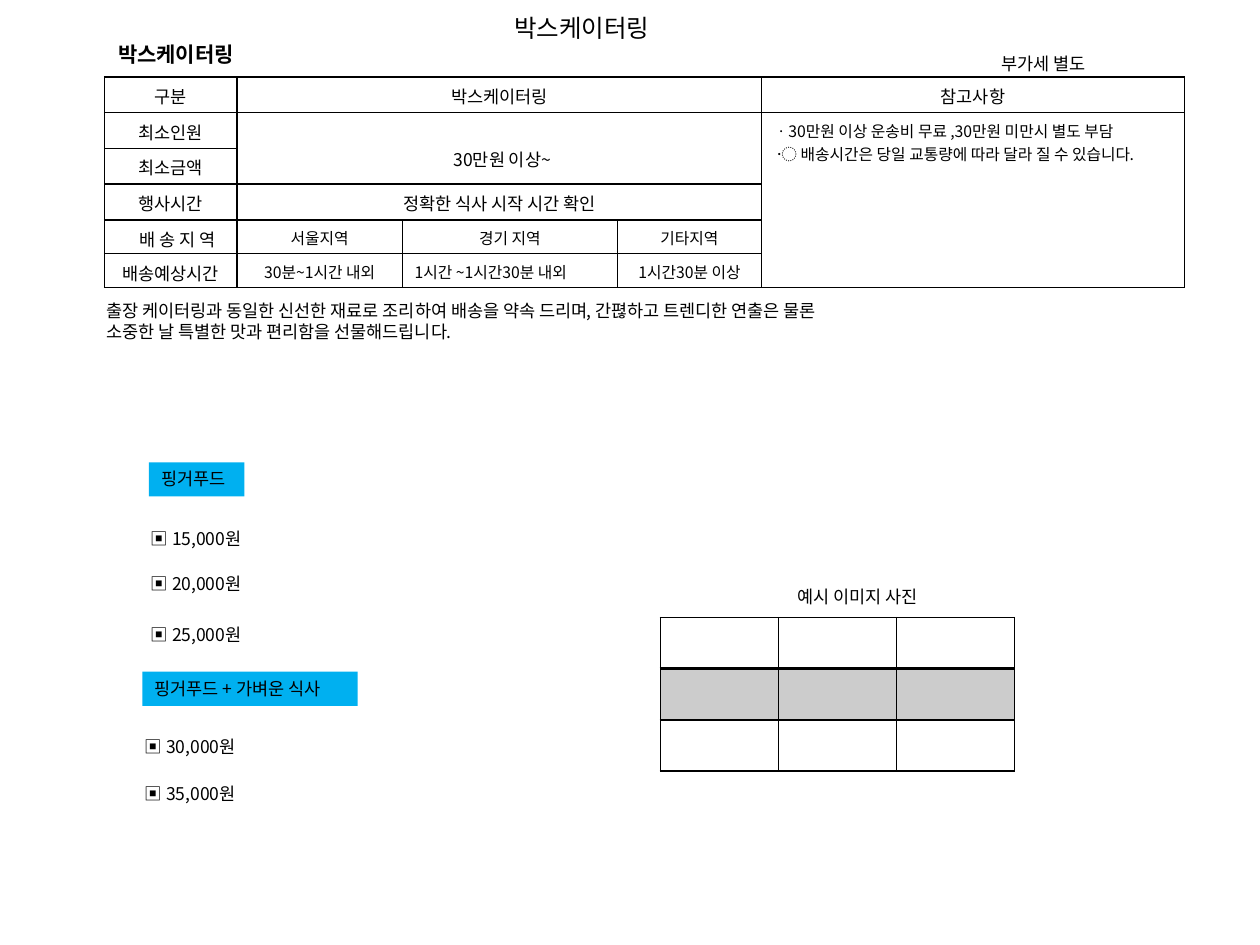
from dataclasses import dataclass

from lxml import etree
from pptx import Presentation
from pptx.dml.color import RGBColor
from pptx.enum.shapes import MSO_SHAPE
from pptx.enum.text import MSO_ANCHOR, MSO_AUTO_SIZE, PP_ALIGN
from pptx.oxml.ns import qn
from pptx.util import Cm, Pt

FONT = "Noto Sans CJK KR"
COLORS = {"ink": "000000", "tag": "00B0F0"}
LEFT, CENTER = PP_ALIGN.LEFT, PP_ALIGN.CENTER
TOP, MIDDLE = MSO_ANCHOR.TOP, MSO_ANCHOR.MIDDLE
GROW = MSO_AUTO_SIZE.SHAPE_TO_FIT_TEXT
RECTANGLE = MSO_SHAPE.RECTANGLE
TITLE_ONLY = 5


@dataclass
class Label:
    lines: list[str]
    left: float
    top: float
    width: float
    height: float = 0.69
    size: int = 10
    bold: bool = False


@dataclass
class Entry:
    row: int
    col: int
    lines: list[str]
    size: int = 10
    rows: int = 1
    cols: int = 1
    align: PP_ALIGN = CENTER
    anchor: MSO_ANCHOR = MIDDLE
    pad_left: float = 0.25
    pad_top: float = 0.13


@dataclass
class PriceGroup:
    tag: Label
    price_left: float
    prices: list[tuple[float, str]]


def color(key: str) -> RGBColor:
    return RGBColor.from_string(COLORS[key])


def write(frame, lines: list[str], size: int, align: PP_ALIGN = LEFT, bold: bool = False) -> None:
    for index, line in enumerate(lines):
        paragraph = frame.paragraphs[0] if index == 0 else frame.add_paragraph()
        paragraph.alignment = align
        run = paragraph.add_run()
        run.text = line
        run.font.size = Pt(size)
        run.font.bold = bold
        run.font.name = FONT
        run.font.color.rgb = color("ink")
        east_asian = etree.SubElement(run.font._element, qn("a:ea"))
        east_asian.set("typeface", FONT)


def fill_label(shape, label: Label) -> None:
    frame = shape.text_frame
    frame.word_wrap = False
    frame.auto_size = GROW
    frame.vertical_anchor = TOP
    write(frame, label.lines, label.size, bold=label.bold)


def box(label: Label) -> list[Cm]:
    return [Cm(v) for v in (label.left, label.top, label.width, label.height)]


def add_label(slide, label: Label) -> None:
    fill_label(slide.shapes.add_textbox(*box(label)), label)


def add_tag(slide, label: Label) -> None:
    shape = slide.shapes.add_shape(RECTANGLE, *box(label))
    shape.shadow.inherit = False
    shape.fill.solid()
    shape.fill.fore_color.rgb = color("tag")
    shape.line.fill.background()
    fill_label(shape, label)


def add_border(cell, side: str, points: float) -> None:
    line = etree.SubElement(cell._tc.get_or_add_tcPr(), qn(f"a:ln{side}"), w=str(Pt(points)))
    fill = etree.SubElement(line, qn("a:solidFill"))
    etree.SubElement(fill, qn("a:srgbClr"), val=COLORS["ink"])


def add_grid(slide, left: float, top: float, widths: list[float], heights: list[float],
             thick_row: int = -1):
    """Plain ruled table; the rule under thick_row is 2 pt, all others 1 pt."""
    table = slide.shapes.add_table(len(heights), len(widths), Cm(left), Cm(top),
                                   Cm(sum(widths)), Cm(sum(heights))).table
    table.first_row = table.horz_banding = False
    for column, width in zip(table.columns, widths):
        column.width = Cm(width)
    for row, height in zip(table.rows, heights):
        row.height = Cm(height)
    for r in range(len(heights)):
        for c in range(len(widths)):
            cell = table.cell(r, c)
            above = 2 if thick_row >= 0 and r == thick_row + 1 else 1
            below = 2 if r == thick_row else 1
            for side, points in (("L", 1), ("R", 1), ("T", above), ("B", below)):
                add_border(cell, side, points)
            cell.fill.background()
    return table


def write_entry(table, entry: Entry) -> None:
    cell = table.cell(entry.row, entry.col)
    if entry.rows * entry.cols > 1:
        cell.merge(table.cell(entry.row + entry.rows - 1, entry.col + entry.cols - 1))
    cell.vertical_anchor = entry.anchor
    cell.margin_left, cell.margin_top = Cm(entry.pad_left), Cm(entry.pad_top)
    write(cell.text_frame, entry.lines, entry.size, entry.align)


def shade(cell, percent: int) -> None:
    cell.fill.solid()
    cell.fill.fore_color.rgb = color("ink")
    tint = cell._tc.tcPr.find(qn("a:solidFill")).find(qn("a:srgbClr"))
    etree.SubElement(tint, qn("a:alpha"), val=str(percent * 1000))


TITLE = Label(["박스케이터링"], 10.11, 0.13, 3.51, 0.86, size=14)
LABELS = [
    Label(["박스케이터링"], 2.13, 0.71, 3.07, 0.76, size=12, bold=True),
    Label(["부가세 별도"], 19.94, 0.94, 2.41),
    Label(["예시 이미지 사진"], 15.82, 11.68, 3.25),
    Label(["출장 케이터링과 동일한 신선한 재료로 조리하여 배송을 약속 드리며, 간펺하고 트렌디한 연출은 물론",
           "소중한 날 특별한 맛과 편리함을 선물해드립니다."], 1.9, 5.92, 16.69, 1.12),
]
TERMS = [
    Entry(0, 0, ["구분"]),
    Entry(0, 1, ["박스케이터링"], cols=3),
    Entry(0, 4, ["참고사항"]),
    Entry(1, 0, ["최소인원"]),
    Entry(1, 1, ["30만원 이상~"], rows=2, cols=3, pad_left=0.37, pad_top=0.55),
    Entry(1, 4, ["ㆍ30만원 이상 운송비 무료 ,30만원 미만시 별도 부담",
                 " 〮 배송시간은 당일 교통량에 따라 달라 질 수 있습니다."],
          size=9, rows=5, align=LEFT, anchor=TOP),
    Entry(2, 0, ["최소금액"]),
    Entry(3, 0, ["행사시간"]),
    Entry(3, 1, ["정확한 식사 시작 시간 확인"], cols=3),
    Entry(4, 0, ["배 송 지 역"], pad_left=0.53),
    Entry(4, 1, ["서울지역"], size=9),
    Entry(4, 2, ["경기 지역"], size=9),
    Entry(4, 3, ["기타지역"], size=9),
    Entry(5, 0, ["배송예상시간"]),
    Entry(5, 1, ["30분~1시간 내외"], size=9),
    Entry(5, 2, ["1시간 ~1시간30분 내외"], size=9, align=LEFT),
    Entry(5, 3, ["1시간30분 이상"], size=9),
]
PRICE_GROUPS = [
    PriceGroup(Label(["핑거푸드"], 3.0, 9.32, 1.93), 2.79,
               [(10.52, "15,000"), (11.43, "20,000"), (12.45, "25,000")]),
    PriceGroup(Label(["핑거푸드 + 가벼운 식사"], 2.87, 13.54, 4.34), 2.67,
               [(14.71, "30,000"), (15.65, "35,000")]),
]


def main() -> None:
    deck = Presentation()
    deck.slide_width, deck.slide_height = Cm(25.4), Cm(19.05)
    slide = deck.slides.add_slide(deck.slide_layouts[TITLE_ONLY])

    # Title and free-standing text
    title = slide.shapes.title
    title.left, title.top, title.width, title.height = box(TITLE)
    fill_label(title, TITLE)
    for label in LABELS:
        add_label(slide, label)

    # Ordering terms
    terms = add_grid(slide, 2.11, 1.55, [2.67, 3.33, 4.34, 2.9, 8.53], [0.72] * 4 + [0.68] * 2)
    for entry in TERMS:
        write_entry(terms, entry)

    # Price lists
    for group in PRICE_GROUPS:
        add_tag(slide, group.tag)
        for top, price in group.prices:
            add_label(slide, Label([f"▣ {price}원"], group.price_left, top, 2.41))

    # Empty grid for sample photos
    samples = add_grid(slide, 13.31, 12.45, [2.38] * 3, [1.03] * 3, thick_row=0)
    for column in range(3):
        shade(samples.cell(1, column), 20)

    deck.save("out.pptx")


if __name__ == "__main__":
    main()
